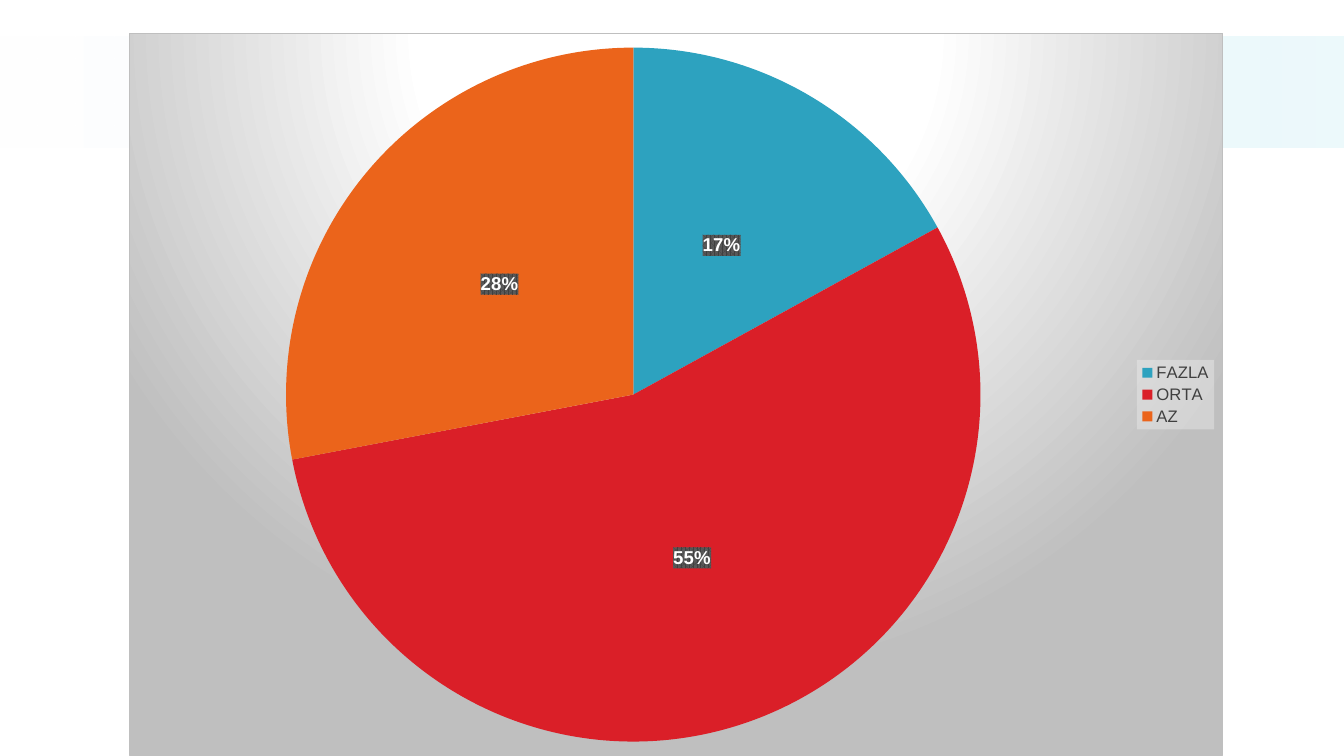
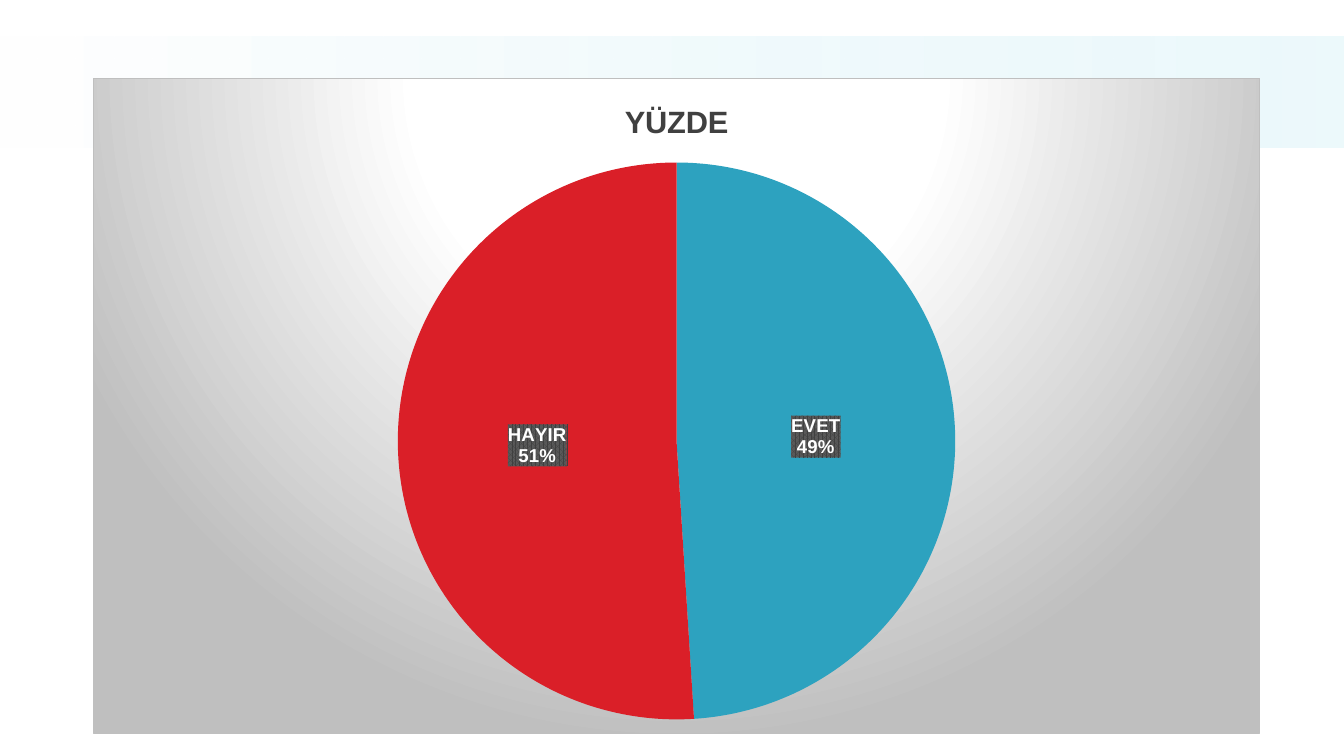
from lxml import etree
from pptx import Presentation, util as u
from pptx.chart.data import CategoryChartData
from pptx.dml.color import RGBColor
from pptx.enum import chart as ch, shapes
from pptx.oxml.ns import nsdecls, qn

FONT = "Arial"
COLORS = {
    "white": "FFFFFF", "band": "DEF5FA", "edge": "BFBFBF", "text": "404040",
    "label_back": "595959", "legend_back": "F2F2F2",
}
SLICES = ["2DA2BF", "DA1F28", "EB641B"]

CHARTS = [
    {"series": "Series 1", "answers": {"FAZLA": 17, "ORTA": 55, "AZ": 28},
     "at": (1.28, 0.33, 10.85, 7.17), "titled": False},
    {"series": "YÜZDE", "answers": {"EVET": 49, "HAYIR": 51},
     "at": (0.92, 0.77, 11.58, 6.51), "titled": True},
]


def gradient(stops, direction):
    """Gradient XML from (position %, colour name, opacity %) stops."""
    marks = "".join(
        f'<a:gs pos="{pos * 1000}"><a:srgbClr val="{COLORS[name]}">'
        f'<a:alpha val="{opacity * 1000}"/></a:srgbClr></a:gs>'
        for pos, name, opacity in stops)
    return (f'<a:gradFill {nsdecls("a")} rotWithShape="1">'
            f'<a:gsLst>{marks}</a:gsLst>{direction}</a:gradFill>')


def paint(part, fill_and_line):
    """Give a chart part a fill and line; it must already have its font."""
    look = f'<c:spPr {nsdecls("c", "a")}>{fill_and_line}</c:spPr>'
    part.find(qn("c:txPr")).addprevious(etree.fromstring(look))


band_fill = gradient([(0, "white", 100), (100, "band", 54)], '<a:lin ang="0" scaled="0"/>')
chart_look = gradient(
    [(0, "white", 100), (39, "white", 100), (100, "edge", 100)],
    '<a:path path="circle"><a:fillToRect l="50000" t="-80000" r="50000" b="180000"/></a:path>',
) + f'<a:ln w="9525"><a:solidFill><a:srgbClr val="{COLORS["edge"]}"/></a:solidFill></a:ln>'
label_look = (
    f'<a:pattFill prst="pct75"><a:fgClr><a:srgbClr val="{COLORS["text"]}"/></a:fgClr>'
    f'<a:bgClr><a:srgbClr val="{COLORS["label_back"]}"/></a:bgClr></a:pattFill>'
    '<a:ln><a:noFill/></a:ln>')
legend_look = (
    f'<a:solidFill><a:srgbClr val="{COLORS["legend_back"]}"><a:alpha val="39000"/>'
    '</a:srgbClr></a:solidFill><a:ln><a:noFill/></a:ln>')

prs = Presentation()
prs.slide_width, prs.slide_height = u.Inches(13.33), u.Inches(7.5)

for spec_row in CHARTS:
    slide = prs.slides.add_slide(prs.slide_layouts[6])

    band = slide.shapes.add_shape(
        shapes.MSO_SHAPE.RECTANGLE, 0, u.Inches(0.36), prs.slide_width, u.Inches(1.1))
    band.shadow.inherit = False
    band.line.fill.background()
    band.fill.background()
    no_fill = band._element.spPr.find(qn("a:noFill"))
    no_fill.getparent().replace(no_fill, etree.fromstring(band_fill))

    answers = CategoryChartData()
    answers.categories = list(spec_row["answers"])
    answers.add_series(spec_row["series"], list(spec_row["answers"].values()))
    pie = slide.shapes.add_chart(
        ch.XL_CHART_TYPE.PIE, *map(u.Inches, spec_row["at"]), answers).chart
    pie.font.name, pie.font.size = FONT, u.Pt(10)
    paint(pie._chartSpace, chart_look)

    plot = pie.plots[0]
    plot.vary_by_categories = True
    for index in range(len(spec_row["answers"])):
        piece = plot.series[0].points[index].format
        piece.fill.solid()
        piece.fill.fore_color.rgb = RGBColor.from_string(SLICES[index])
        piece.line.fill.background()

    labels = plot.series[0].data_labels
    labels.show_value = False
    labels.show_percentage = True
    labels.show_category_name = spec_row["titled"]
    labels.position = ch.XL_LABEL_POSITION.CENTER
    fonts = [(labels.font, 13.3, "white", True)]
    paint(labels._element, label_look)
    separator = etree.fromstring(f'<c:separator {nsdecls("c")}>\n</c:separator>')
    labels._element.find(qn("c:showPercent")).getparent().find(
        qn("c:showBubbleSize")).addnext(separator)

    pie.has_title = spec_row["titled"]
    pie.has_legend = not spec_row["titled"]
    if pie.has_title:
        heading = pie.chart_title.text_frame
        heading.text = spec_row["series"]
        fonts.append((heading.paragraphs[0].runs[0].font, 22, "text", True))
    else:
        pie.legend.position = ch.XL_LEGEND_POSITION.RIGHT
        pie.legend.include_in_layout = False
        fonts.append((pie.legend.font, 11.9, "text", False))
        paint(pie.legend._element, legend_look)

    for font, size, color, bold in fonts:
        font.name, font.size, font.bold = FONT, u.Pt(size), bold
        font.color.rgb = RGBColor.from_string(COLORS[color])

prs.save("out.pptx")
